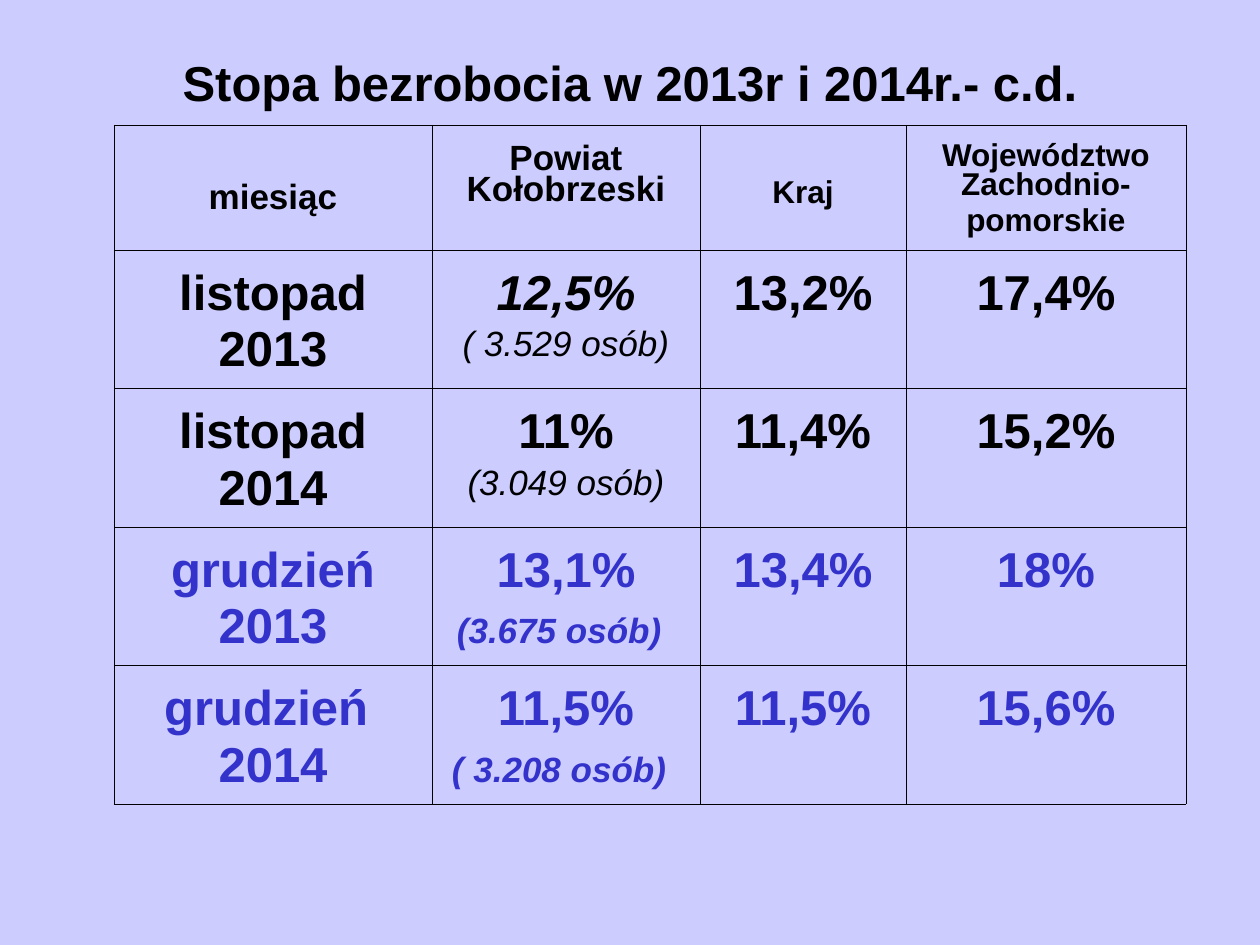
import dataclasses

import lxml.etree
import pptx
import pptx.dml.color
import pptx.enum.text
import pptx.oxml.ns
import pptx.util

EMU_PER_PX = 914400 / 126
BLACK, BLUE, LAVENDER = "000000", "3333CC", "CCCCFF"
FONT = "Arial"
COLUMN_WIDTHS = [318, 268, 206, 280]
ROW_HEIGHTS = [119, 132, 132, 132, 132]
INNER_LINE, OUTER_LINE = 0.11, 0.23


@dataclasses.dataclass
class Run:
    text: str
    size: int = 28
    bold: bool = True
    italic: bool = False
    color: str = BLACK


@dataclasses.dataclass
class CellText:
    paragraphs: list[list[Run]]
    top: int = 25
    before: float = 7


@dataclasses.dataclass
class Month:
    name: str
    year: str
    county: Run
    people: Run
    country: str
    province: str
    color: str = BLACK
    tail: str = ""


MONTHS = [
    Month("listopad", "2013", Run("12,5%", italic=True),
          Run("( 3.529 osób)", 20, False, True), "13,2%", "17,4%"),
    Month("listopad", "2014", Run("11%"),
          Run("(3.049 osób)", 20, False, True), "11,4%", "15,2%"),
    Month("grudzień", "2013", Run("13,1%", color=BLUE),
          Run("(3.675 osób)", 20, True, True, BLUE), "13,4%", "18%", BLUE, " "),
    Month("grudzień ", "2014", Run("11,5%", color=BLUE),
          Run("( 3.208 osób)", 20, True, True, BLUE), "11,5%", "15,6%", BLUE, " "),
]

HEADER = [
    CellText([[Run("miesiąc", 20)]], 59, 4.5),
    CellText([[Run("Powiat Kołobrzeski", 20)]], 20, 5),
    CellText([[Run("Kraj", 18)]], 56, 4.5),
    CellText([[Run("Województwo Zachodnio-", 18)], [Run("pomorskie", 18)]], 19, 4.5),
]


def px(n: int) -> int:
    return round(n * EMU_PER_PX)


def rgb(value: str) -> pptx.dml.color.RGBColor:
    return pptx.dml.color.RGBColor.from_string(value)


def write_runs(p, runs: list[Run]) -> None:
    p.alignment = pptx.enum.text.PP_ALIGN.CENTER
    for run in runs:
        r = p.add_run()
        r.text = run.text
        r.font.name = FONT
        r.font.size = pptx.util.Pt(run.size)
        r.font.bold = run.bold
        r.font.italic = run.italic
        r.font.color.rgb = rgb(run.color)


def month_cells(month: Month) -> list[CellText]:
    people = [month.people]
    if month.tail:
        people.append(Run(month.tail, color=month.color))
    return [
        CellText([[Run(month.name, color=month.color)], [Run(month.year, color=month.color)]]),
        CellText([[month.county], people]),
        CellText([[Run(month.country, color=month.color)]]),
        CellText([[Run(month.province, color=month.color)]]),
    ]


def add_border(cell, side: str, width: float) -> None:
    qn = pptx.oxml.ns.qn
    ln = lxml.etree.SubElement(cell._tc.get_or_add_tcPr(), qn(f"a:ln{side}"),
                               w=str(int(pptx.util.Pt(width))))
    fill = lxml.etree.SubElement(ln, qn("a:solidFill"))
    lxml.etree.SubElement(fill, qn("a:srgbClr"), val=BLACK)


def fill_cell(cell, content: CellText, outer: dict[str, bool]) -> None:
    cell.margin_left = cell.margin_right = px(13)
    cell.margin_top, cell.margin_bottom = px(content.top), px(6)
    cell.vertical_anchor = pptx.enum.text.MSO_ANCHOR.TOP
    for side, is_outer in outer.items():
        add_border(cell, side, OUTER_LINE if is_outer else INNER_LINE)
    cell.fill.background()
    tf = cell.text_frame
    for i, runs in enumerate(content.paragraphs):
        p = tf.add_paragraph() if i else tf.paragraphs[0]
        p.line_spacing = 0.81
        p.space_before = pptx.util.Pt(content.before)
        write_runs(p, runs)


def add_title(s, text: str) -> None:
    sp = s.shapes.add_textbox(px(63), px(38), px(1134), px(87))
    tf = sp.text_frame
    tf.word_wrap = True
    tf.vertical_anchor = pptx.enum.text.MSO_ANCHOR.MIDDLE
    write_runs(tf.paragraphs[0], [Run(text)])


def add_rates_table(s, rows: list[list[CellText]]) -> None:
    table = s.shapes.add_table(len(rows), len(COLUMN_WIDTHS), px(114), px(125),
                               px(sum(COLUMN_WIDTHS)), px(sum(ROW_HEIGHTS))).table
    table.first_row = table.horz_banding = False
    for column, width in zip(table.columns, COLUMN_WIDTHS):
        column.width = px(width)
    for i, (row, height) in enumerate(zip(rows, ROW_HEIGHTS)):
        table.rows[i].height = px(height)
        for j, content in enumerate(row):
            outer = {"L": j == 0, "R": j == len(row) - 1,
                     "T": i == 0, "B": i == len(rows) - 1}
            fill_cell(table.cell(i, j), content, outer)


def main() -> None:
    prs = pptx.Presentation()
    prs.slide_width, prs.slide_height = px(1260), px(945)
    s = prs.slides.add_slide(prs.slide_layouts[6])
    s.background.fill.solid()
    s.background.fill.fore_color.rgb = rgb(LAVENDER)
    add_title(s, "Stopa bezrobocia w 2013r i 2014r.- c.d.")
    add_rates_table(s, [HEADER] + [month_cells(month) for month in MONTHS])
    prs.save("out.pptx")


if __name__ == "__main__":
    main()
